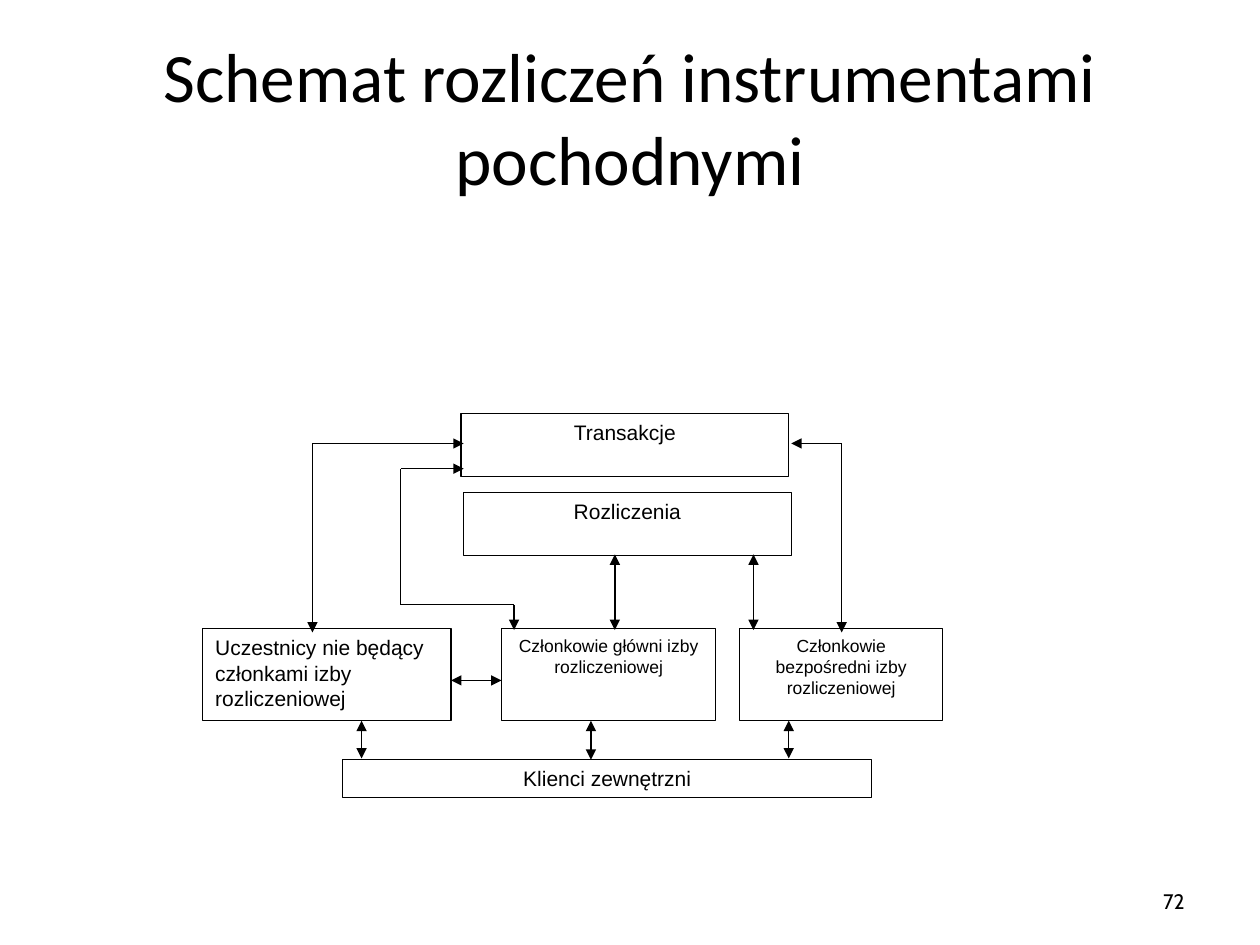
import pptx
import pptx.util
import pptx.dml.color
import pptx.enum.shapes
import pptx.enum.text
import pptx.oxml.ns
from lxml import etree

Inches, Pt = pptx.util.Inches, pptx.util.Pt
ALIGN = pptx.enum.text.PP_ALIGN
ANCHOR = pptx.enum.text.MSO_ANCHOR
BLACK = pptx.dml.color.RGBColor(0x00, 0x00, 0x00)
WHITE = pptx.dml.color.RGBColor(0xFF, 0xFF, 0xFF)
LINE_WIDTH = Pt(0.75)

# Diagram parts, in inches from the diagram's top left corner
BOXES = [  # text, left, top, width, height, size, alignment
    ("Transakcje", 2.05, 0, 2.6, 0.5, 12, ALIGN.CENTER),
    ("Rozliczenia", 2.07, 0.63, 2.6, 0.5, 12, ALIGN.CENTER),
    ("Uczestnicy nie będący członkami izby rozliczeniowej",
     0, 1.71, 1.97, 0.73, 12, ALIGN.LEFT),
    ("Członkowie główni izby rozliczeniowej",
     2.37, 1.71, 1.7, 0.73, 10, ALIGN.CENTER),
    ("Członkowie bezpośredni izby rozliczeniowej",
     4.26, 1.71, 1.61, 0.73, 10, ALIGN.CENTER),
    ("Klienci zewnętrzni", 1.11, 2.75, 4.2, 0.3, 12, ALIGN.CENTER),
]
DOUBLE_ARROWS = [  # x1, y1, x2, y2
    (3.27, 1.12, 3.27, 1.72),
    (4.37, 1.12, 4.37, 1.72),
    (1.97, 2.12, 2.37, 2.12),
    (1.26, 2.44, 1.26, 2.74),
    (3.08, 2.44, 3.08, 2.75),
    (4.65, 2.44, 4.65, 2.74),
]
ROUTES = [  # corner points of paths with an arrowhead at both ends
    [(0.87, 1.74), (0.87, 0.24), (2.07, 0.24)],
    [(4.67, 0.24), (5.07, 0.24), (5.07, 1.74)],
    [(2.07, 0.44), (1.57, 0.44), (1.57, 1.52), (2.47, 1.52), (2.47, 1.72)],
]


def set_text(sp, text, font, size, align, anchor):
    tf = sp.text_frame
    tf.word_wrap = True
    tf.vertical_anchor = anchor
    tf.text = text
    p = tf.paragraphs[0]
    p.alignment = align
    r = p.runs[0]
    r.font.name = font
    r.font.size = Pt(size)
    r.font.color.rgb = BLACK


def add_label(slide, left, top, width, height, text, font, size, align):
    sp = slide.shapes.add_textbox(left, top, width, height)
    set_text(sp, text, font, size, align, ANCHOR.MIDDLE)


def add_box(slide, left, top, width, height, text, size, align):
    sp = slide.shapes.add_shape(
        pptx.enum.shapes.MSO_SHAPE.RECTANGLE, left, top, width, height)
    sp.shadow.inherit = False
    sp.fill.solid()
    sp.fill.fore_color.rgb = WHITE
    sp.line.color.rgb = BLACK
    sp.line.width = LINE_WIDTH
    set_text(sp, text, "Arial", size, align, ANCHOR.TOP)


def add_line(slide, x1, y1, x2, y2, head, tail):
    """Draw a line; head and tail put an arrowhead at its start and end."""
    cxn = slide.shapes.add_connector(
        pptx.enum.shapes.MSO_CONNECTOR.STRAIGHT, x1, y1, x2, y2)
    cxn.line.color.rgb = BLACK
    cxn.line.width = LINE_WIDTH
    qn = pptx.oxml.ns.qn
    ln = cxn.line._get_or_add_ln()
    for tag, wanted in (("a:headEnd", head), ("a:tailEnd", tail)):
        if wanted:
            etree.SubElement(ln, qn(tag), type="triangle")
    etree.SubElement(cxn._element.spPr, qn("a:effectLst"))


def add_diagram(slide, left, top):
    for text, x, y, width, height, size, align in BOXES:
        add_box(slide, left + Inches(x), top + Inches(y),
                Inches(width), Inches(height), text, size, align)
    straight = [[(x1, y1), (x2, y2)] for x1, y1, x2, y2 in DOUBLE_ARROWS]
    for route in straight + ROUTES:
        points = [(left + Inches(x), top + Inches(y)) for x, y in route]
        last = len(points) - 2
        for i, (start, end) in enumerate(zip(points, points[1:])):
            add_line(slide, *start, *end, head=i == 0, tail=i == last)


def main():
    prs = pptx.Presentation()
    prs.slide_width, prs.slide_height = Inches(10), Inches(7.5)
    slide = prs.slides.add_slide(prs.slide_layouts[6])
    add_label(slide, Inches(0.5), Inches(0.3), Inches(9), Inches(1.25),
              "Schemat rozliczeń instrumentami pochodnymi",
              "Calibri", 39.6, ALIGN.CENTER)
    add_diagram(slide, Inches(1.61), Inches(3.28))
    add_label(slide, Inches(7.17), Inches(6.95), Inches(2.33), Inches(0.4),
              "72", "Cabin", 12, ALIGN.RIGHT)
    prs.save("out.pptx")


if __name__ == "__main__":
    main()
